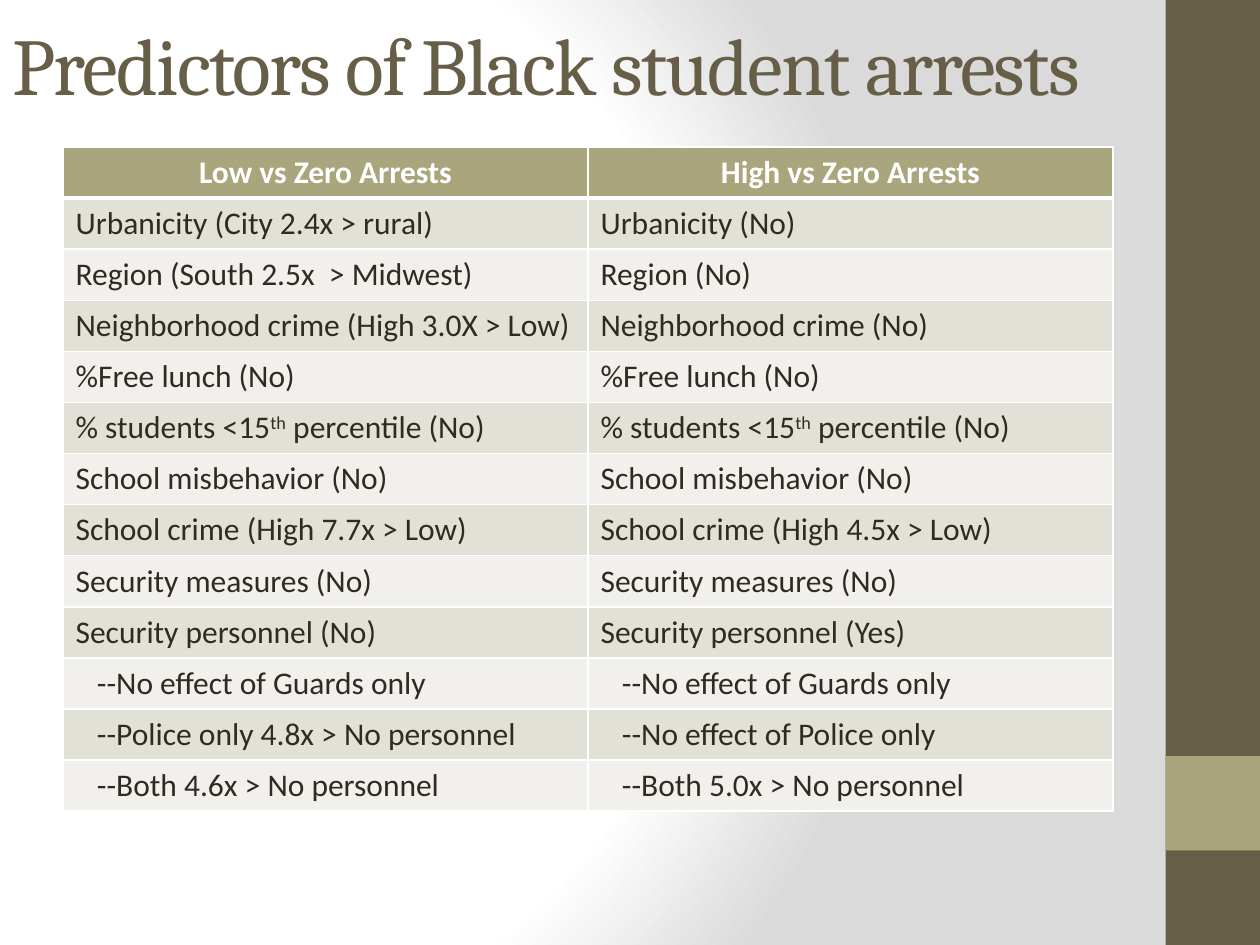
from lxml import etree
from pptx import Presentation
from pptx.dml.color import RGBColor
from pptx.enum.shapes import MSO_SHAPE
from pptx.enum.text import MSO_ANCHOR, MSO_AUTO_SIZE, PP_ALIGN
from pptx.oxml import parse_xml
from pptx.oxml.ns import qn
from pptx.util import Pt

RECT = MSO_SHAPE.RECTANGLE
MIDDLE = MSO_ANCHOR.MIDDLE
NO_FIT = MSO_AUTO_SIZE.NONE
LEFT, CENTER = PP_ALIGN.LEFT, PP_ALIGN.CENTER
NS = "http://schemas.openxmlformats.org/drawingml/2006/main"

BROWN, OLIVE, INK, WHITE = "675E47", "A9A57C", "2F2B20", "FFFFFF"
BANDS = "E2E1D7", "F1F0EC"
STOPS = (0, WHITE), (75, WHITE), (100, "DADADA")

HEADS = "Low vs Zero Arrests", "High vs Zero Arrests"
ROWS = [
    ("Urbanicity (City 2.4x > rural)", "Urbanicity (No)"),
    ("Region (South 2.5x  > Midwest)", "Region (No)"),
    ("Neighborhood crime (High 3.0X > Low)", "Neighborhood crime (No)"),
    ("%Free lunch (No)",) * 2,
    ("% students <15^th^ percentile (No)",) * 2,
    ("School misbehavior (No)",) * 2,
    ("School crime (High 7.7x > Low)", "School crime (High 4.5x > Low)"),
    ("Security measures (No)",) * 2,
    ("Security personnel (No)", "Security personnel (Yes)"),
    ("--No effect of Guards only",) * 2,
    ("--Police only 4.8x > No personnel", "--No effect of Police only"),
    ("--Both 4.6x > No personnel", "--Both 5.0x > No personnel"),
]


def color(code):
    return RGBColor.from_string(code)


def style(font, face, size, code, bold=False):
    font.name, font.size, font.bold = face, Pt(size), bold
    font.color.rgb = color(code)


def add_glow(slide):
    fill = slide.background.fill
    fill.solid()
    stops = "".join(
        f'<a:gs pos="{pos * 1000}"><a:srgbClr val="{code}"/></a:gs>'
        for pos, code in STOPS)
    glow = parse_xml(
        f'<a:gradFill xmlns:a="{NS}" rotWithShape="1"><a:gsLst>{stops}</a:gsLst>'
        '<a:path path="circle"><a:fillToRect l="20000" t="50000" r="100000" '
        'b="50000"/></a:path></a:gradFill>')
    props = slide.element.find(".//" + qn("p:bgPr"))
    props.replace(props.find(qn("a:solidFill")), glow)


def add_bar(slide, left, top, width, height, code):
    bar = slide.shapes.add_shape(RECT, Pt(left), Pt(top), Pt(width), Pt(height))
    bar.shadow.inherit = False
    bar.fill.solid()
    bar.fill.fore_color.rgb = color(code)
    bar.line.fill.background()


def add_side(slide, left, top, width, height):
    add_bar(slide, left, top, width, height, BROWN)
    add_bar(slide, left, top + height * 0.8, width, width, OLIVE)


def set_title(slide, text, left, top, width, height):
    title = slide.shapes.title
    title.left, title.top = Pt(left), Pt(top)
    title.width, title.height = Pt(width), Pt(height)
    frame = title.text_frame
    frame.text = text
    frame.word_wrap, frame.auto_size = True, NO_FIT
    frame.vertical_anchor = MIDDLE
    line = frame.paragraphs[0]
    line.alignment = LEFT
    style(line.font, "Cambria", 46, BROWN)
    line.runs[0].font._element.set("spc", "-100")


def set_edges(cell, base):
    props = cell._tc.get_or_add_tcPr()
    for side, width in zip("LRTB", (1, 1, 1, base)):
        edge = etree.SubElement(props, qn(f"a:ln{side}"), w=str(Pt(width)))
        fill = etree.SubElement(edge, qn("a:solidFill"))
        etree.SubElement(fill, qn("a:srgbClr"), val=WHITE)


def fill_cell(cell, text, code, head):
    set_edges(cell, 3 if head else 1)
    cell.fill.solid()
    cell.fill.fore_color.rgb = color(code)
    if text.startswith("--"):
        cell.margin_left = Pt(19.4)
    line = cell.text_frame.paragraphs[0]
    line.alignment = CENTER if head else LEFT
    style(line.font, "Calibri", 18, WHITE if head else INK, head)
    for num, part in enumerate(text.split("^")):
        run = line.add_run()
        run.text = part
        if num % 2:
            run.font._element.set("baseline", "30000")


def add_grid(slide, left, top, width, height):
    rows = [HEADS] + ROWS
    table = slide.shapes.add_table(
        len(rows), len(HEADS), Pt(left), Pt(top), Pt(width), Pt(height)).table
    for row, texts in enumerate(rows):
        head = row == 0
        code = OLIVE if head else BANDS[(row - 1) % 2]
        for col, text in enumerate(texts):
            fill_cell(table.cell(row, col), text, code, head)


def main():
    deck = Presentation()
    deck.slide_width, deck.slide_height = Pt(720), Pt(540)
    slide = deck.slides.add_slide(deck.slide_layouts[5])
    add_glow(slide)
    add_side(slide, 666, 0, 54, 540)
    set_title(slide, "Predictors of Black student arrests", 0, 0, 702, 72)
    add_grid(slide, 36, 84, 600, 379.6)
    deck.save("out.pptx")


if __name__ == "__main__":
    main()
